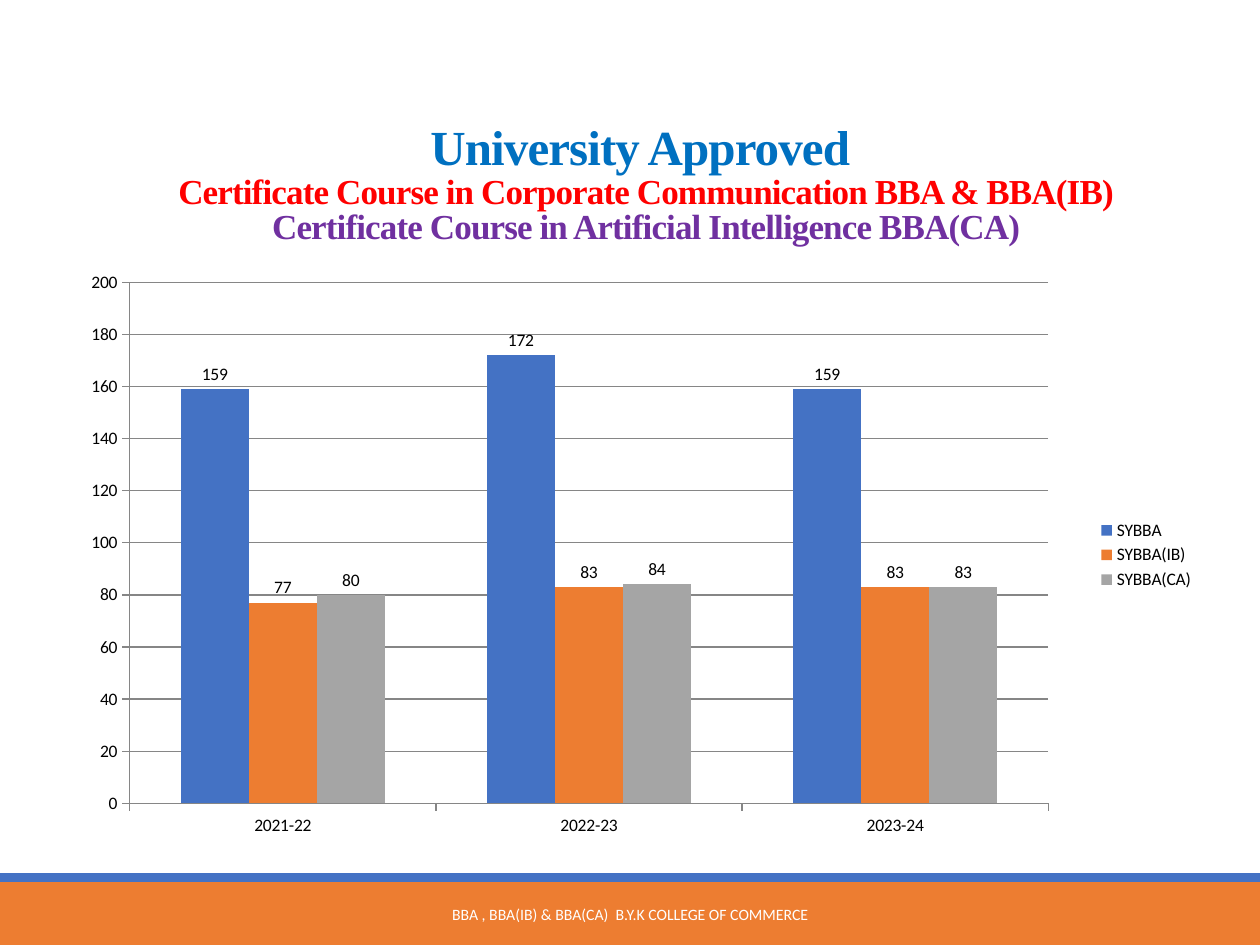
from lxml import etree
from pptx import Presentation
from pptx.chart.data import CategoryChartData
from pptx.dml.color import RGBColor
from pptx.enum.chart import XL_CHART_TYPE, XL_LABEL_POSITION, XL_LEGEND_POSITION, XL_TICK_MARK
from pptx.enum.shapes import MSO_SHAPE
from pptx.enum.text import MSO_ANCHOR, PP_ALIGN
from pptx.oxml.ns import qn
from pptx.util import Inches, Pt

RECTANGLE = MSO_SHAPE.RECTANGLE
CENTER = PP_ALIGN.CENTER
MIDDLE, BOTTOM = MSO_ANCHOR.MIDDLE, MSO_ANCHOR.BOTTOM
CLUSTERED = XL_CHART_TYPE.COLUMN_CLUSTERED
OUTSIDE_END = XL_LABEL_POSITION.OUTSIDE_END
LEGEND_RIGHT = XL_LEGEND_POSITION.RIGHT
TICK_OUTSIDE = XL_TICK_MARK.OUTSIDE

WIDTH, HEIGHT = 10, 7.5
BLUE, ORANGE, GRAY = "4472C4", "ED7D31", "A5A5A5"
AXIS_GRAY = "868686"
SERIF, SANS = "Times New Roman", "Calibri"

TITLE = [
    ("University Approved ", 28, "0070C0"),
    ("Certificate Course in Corporate Communication BBA & BBA(IB)", 20, "FF0000"),
    ("Certificate Course in Artificial Intelligence BBA(CA)", 20, "7030A0"),
]
FOOTER = [("BBA , BBA(IB) & BBA(CA)  B.Y.K COLLEGE OF COMMERCE", 9, "FFFFFF")]
YEARS = ["2021-22", "2022-23", "2023-24"]
STUDENTS = [
    ("SYBBA", BLUE, [159, 172, 159]),
    ("SYBBA(IB)", ORANGE, [77, 83, 83]),
    ("SYBBA(CA)", GRAY, [80, 84, 83]),
]
PLOT_AREA = {"x": 0.05, "y": 0.05, "w": 0.81, "h": 0.86}

FOOTER_HEIGHT, STRIPE_HEIGHT = 0.5, 0.07
FOOTER_TOP = HEIGHT - FOOTER_HEIGHT


def color(value):
    return RGBColor.from_string(value)


def add_band(slide, top, height, fill):
    shape = slide.shapes.add_shape(RECTANGLE, 0, Inches(top), Inches(WIDTH), Inches(height))
    shape.shadow.inherit = False
    shape.fill.solid()
    shape.fill.fore_color.rgb = color(fill)
    shape.line.fill.background()


def add_text(slide, box, lines, font, anchor, bold=False, line_spacing=1.0, tracking=0):
    frame = slide.shapes.add_textbox(*map(Inches, box)).text_frame
    frame.word_wrap = True
    frame.vertical_anchor = anchor
    paragraph = frame.paragraphs[0]
    paragraph.alignment = CENTER
    paragraph.line_spacing = line_spacing
    for index, (text, size, text_color) in enumerate(lines):
        if index:
            paragraph.add_line_break()
        run = paragraph.add_run()
        run.text = text
        run.font.name = font
        run.font.size = Pt(size)
        run.font.bold = bold
        run.font.color.rgb = color(text_color)
        run.font._element.set("spc", str(tracking))


def place_plot(chart, shares):
    plot_area = chart._chartSpace.chart.plotArea
    for old_layout in plot_area.findall(qn("c:layout")):
        plot_area.remove(old_layout)
    layout = etree.Element(qn("c:layout"))
    manual = etree.SubElement(layout, qn("c:manualLayout"))
    settings = [("layoutTarget", "inner"), ("xMode", "edge"), ("yMode", "edge"), *shares.items()]
    for name, value in settings:
        etree.SubElement(manual, qn(f"c:{name}")).set("val", str(value))
    plot_area.insert(0, layout)


def add_student_chart(slide, box):
    data = CategoryChartData()
    data.categories = YEARS
    for name, _, values in STUDENTS:
        data.add_series(name, values)
    chart = slide.shapes.add_chart(CLUSTERED, *map(Inches, box), data).chart
    chart.font.name = SANS
    chart.font.size = Pt(10)
    chart.font.color.rgb = color("000000")
    chart.has_title = False
    chart.has_legend = True
    chart.legend.position = LEGEND_RIGHT
    chart.legend.include_in_layout = False

    plot = chart.plots[0]
    plot.vary_by_categories = False
    plot.gap_width = 150
    plot.overlap = 0
    for series, (_, fill, _) in zip(plot.series, STUDENTS):
        series.format.fill.solid()
        series.format.fill.fore_color.rgb = color(fill)
        series.data_labels.show_value = True
        series.data_labels.position = OUTSIDE_END

    value_axis = chart.value_axis
    value_axis.minimum_scale, value_axis.maximum_scale = 0, 200
    value_axis.major_unit = 20
    value_axis.has_major_gridlines = True
    for axis in (chart.category_axis, value_axis):
        axis.major_tick_mark = TICK_OUTSIDE
    for part in (chart.category_axis, value_axis, value_axis.major_gridlines):
        part.format.line.color.rgb = color(AXIS_GRAY)
        part.format.line.width = Pt(0.75)
    place_plot(chart, PLOT_AREA)


def main():
    presentation = Presentation()
    presentation.slide_width, presentation.slide_height = Inches(WIDTH), Inches(HEIGHT)
    slide = presentation.slides.add_slide(presentation.slide_layouts[6])
    add_band(slide, FOOTER_TOP, FOOTER_HEIGHT, ORANGE)
    add_band(slide, FOOTER_TOP - STRIPE_HEIGHT, STRIPE_HEIGHT, BLUE)
    add_text(slide, (3.02, 7.06, 3.96, 0.4), FOOTER, SANS, MIDDLE)
    add_text(slide, (1, 0.42, 8.25, 1.59), TITLE, SERIF, BOTTOM,
             bold=True, line_spacing=0.85, tracking=-50)
    add_student_chart(slide, (0.58, 2, 9, 4.81))
    presentation.save("out.pptx")


if __name__ == "__main__":
    main()
